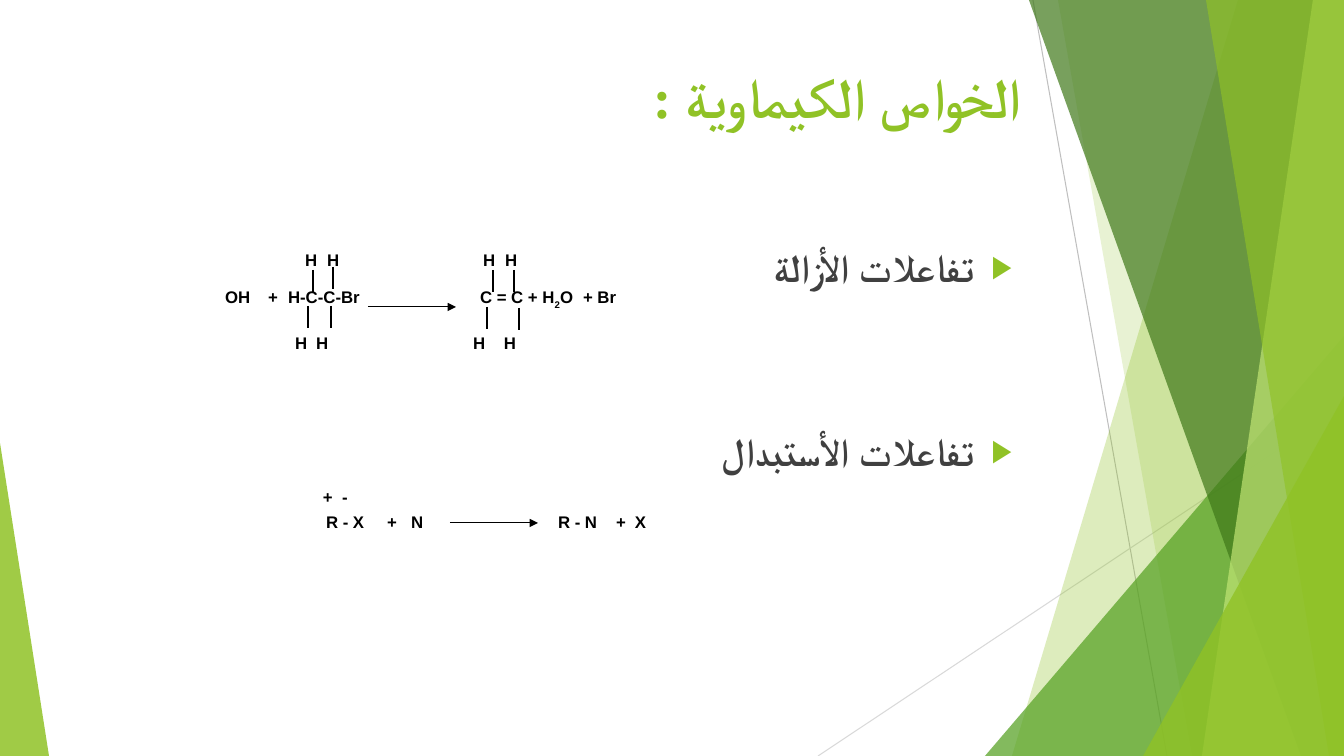
"""Build the slide on elimination and substitution reactions."""
import lxml.etree
import pptx
import pptx.dml.color
import pptx.enum.shapes
import pptx.enum.text
import pptx.oxml
import pptx.oxml.ns
import pptx.util

PX = 9071.43
WIDTH, HEIGHT = 1344, 756
GREEN, DARK, BLACK = "90C226", "404040", "000000"

TITLE = "الخواص الكيماوية :"
BULLETS = [("تفاعلات الأزالة", 0), ("تفاعلات الأستبدال", 98)]

BACK_LINES = [((1033, 0), (1167, HEIGHT), "BFBFBF"),
              ((WIDTH, 406), (818, HEIGHT), "D9D9D9")]
# (kind, geometry, colour, opacity in percent)
PANELS = [
    ("band", (1238, 1012), GREEN, 30),
    ("band", (1058, 1192), GREEN, 20),
    ("triangle", (985, 336, 359, 420, 1), "54A021", 72),
    ("band", (1029, 1301), "3F7819", 70),
    ("band", (1313, 1202), "C0E474", 70),
    ("band", (1206, 1329), GREEN, 65),
    ("triangle", (1143, 396, 201, 360, 1), GREEN, 80),
    ("triangle", (0, 443, 49, 313, 0), GREEN, 85),
]
FORMULA_ROWS = [
    (260, [(305, "H"), (327, "H"), (483, "H"), (505, "H")]),
    (299, [(225, "OH"), (268, "+"), (288, "H-C-C-Br"),
           (480, "C = C + H_2_O"), (583, "+ Br")]),
    (343, [(295, "H"), (316, "H"), (473, "H"), (504, "H")]),
    (497, [(323, "+"), (342, "-")]),
    (522, [(326, "R - X"), (387, "+"), (411, "N"),
           (558, "R - N"), (616, "+"), (635, "X")]),
]
BOND_LENGTH = 22
BONDS = [(313, 270), (333, 267), (493, 270), (514, 270),
         (308, 306), (331, 306), (487, 307), (519, 308)]
ARROW_LENGTH = 88
ARROWS = [(368, 307), (450, 523)]


def px(value):
    """Turn pixels into EMU."""
    return pptx.util.Emu(round(value * PX))


def rgb(colour):
    """Turn a hex string into a colour."""
    return pptx.dml.color.RGBColor.from_string(colour)


def add_xml(parent, tag, **attributes):
    """Append a drawing element to a parent."""
    return lxml.etree.SubElement(parent, pptx.oxml.ns.qn(tag), attributes)


def add_line(shapes, start, end, colour, width, arrow=False):
    """Draw a straight line, with an arrowhead if asked."""
    line = shapes.add_connector(pptx.enum.shapes.MSO_CONNECTOR.STRAIGHT,
                                *map(px, start + end))
    line.line.color.rgb = rgb(colour)
    line.line.width = pptx.util.Pt(width)
    if arrow:
        add_xml(line.line._get_or_add_ln(), "a:tailEnd", type="triangle")
    add_xml(line._element.spPr, "a:effectLst")


def add_panel(shapes, kind, geometry, colour, opacity):
    """Draw one translucent background panel."""
    if kind == "band":
        top, bottom = geometry
        builder = shapes.build_freeform(top, 0, scale=PX)
        builder.add_line_segments([(WIDTH, 0), (WIDTH, HEIGHT), (bottom, HEIGHT)])
        panel = builder.convert_to_shape()
    else:
        panel = shapes.add_shape(pptx.enum.shapes.MSO_SHAPE.ISOSCELES_TRIANGLE,
                                 *map(px, geometry[:4]))
        panel.adjustments[0] = geometry[4]
    panel.shadow.inherit = False
    panel.fill.solid()
    panel.fill.fore_color.rgb = rgb(colour)
    panel.line.fill.background()
    fill = panel._element.spPr.find(pptx.oxml.ns.qn("a:solidFill"))
    add_xml(fill[0], "a:alpha", val=str(opacity * 1000))


def format_run(run, size, font, colour):
    """Give a run its bold font, size and colour."""
    run.font.size = pptx.util.Pt(size)
    run.font.name = font
    run.font.bold = True
    run.font.color.rgb = rgb(colour)
    add_xml(run._r.get_or_add_rPr(), "a:cs", typeface=font)


def set_arabic(paragraph, text, size, colour):
    """Write a right-to-left paragraph."""
    paragraph.text = text
    paragraph.alignment = pptx.enum.text.PP_ALIGN.RIGHT
    paragraph._p.get_or_add_pPr().set("rtl", "1")
    format_run(paragraph.runs[0], size, "Times New Roman", colour)


def add_bullets(shapes):
    """Write the bulleted reaction types."""
    frame = shapes.add_textbox(px(75), px(238), px(947), px(427)).text_frame
    frame.word_wrap = True
    for index, (text, space) in enumerate(BULLETS):
        paragraph = frame.add_paragraph() if index else frame.paragraphs[0]
        set_arabic(paragraph, text, 28, DARK)
        paragraph.space_before = pptx.util.Pt(space)
        properties = paragraph._p.get_or_add_pPr()
        properties.set("marL", str(px(38)))
        properties.set("indent", str(px(-38)))
        add_xml(add_xml(properties, "a:buClr"), "a:srgbClr", val=GREEN)
        add_xml(properties, "a:buSzPct", val="80000")
        add_xml(properties, "a:buFont", typeface="Arial")
        add_xml(properties, "a:buChar", char="▶")


def add_formula_row(shapes, middle, pieces):
    """Write one formula line with a tab stop for each piece."""
    left = pieces[0][0]
    box = shapes.add_textbox(px(left), px(middle - 12), px(440), px(24))
    frame = box.text_frame
    frame.word_wrap = True
    frame.vertical_anchor = pptx.enum.text.MSO_ANCHOR.MIDDLE
    frame.margin_left = frame.margin_right = 0
    frame.margin_top = frame.margin_bottom = 0
    paragraph = frame.paragraphs[0]
    tabs = add_xml(paragraph._p.get_or_add_pPr(), "a:tabLst")
    for stop, _ in pieces[1:]:
        add_xml(tabs, "a:tab", pos=str(px(stop - left)), algn="l")
    line = "\t".join(text for _, text in pieces)
    for index, part in enumerate(line.split("_")):
        run = paragraph.add_run()
        run.text = part
        format_run(run, 12, "Arial", BLACK)
        if index % 2:
            run._r.get_or_add_rPr().set("baseline", "-30000")


def main():
    """Build and save the slide."""
    presentation = pptx.Presentation()
    presentation.slide_width, presentation.slide_height = px(WIDTH), px(HEIGHT)
    slide = presentation.slides.add_slide(presentation.slide_layouts[5])
    shapes = slide.shapes

    for start, end, colour in BACK_LINES:
        add_line(shapes, start, end, colour, 0.75)
    for panel in PANELS:
        add_panel(shapes, *panel)

    title = shapes.title
    title.left, title.top, title.width, title.height = map(px, (85, 57, 947, 145))
    title.text_frame.vertical_anchor = pptx.enum.text.MSO_ANCHOR.TOP
    title.text_frame.auto_size = pptx.enum.text.MSO_AUTO_SIZE.NONE
    set_arabic(title.text_frame.paragraphs[0], TITLE, 40, GREEN)

    add_bullets(shapes)
    for middle, pieces in FORMULA_ROWS:
        add_formula_row(shapes, middle, pieces)
    for x, y in BONDS:
        add_line(shapes, (x, y), (x, y + BOND_LENGTH), BLACK, 1.5)
    for x, y in ARROWS:
        add_line(shapes, (x, y), (x + ARROW_LENGTH, y), BLACK, 0.75, arrow=True)

    presentation.save("out.pptx")


if __name__ == "__main__":
    main()
